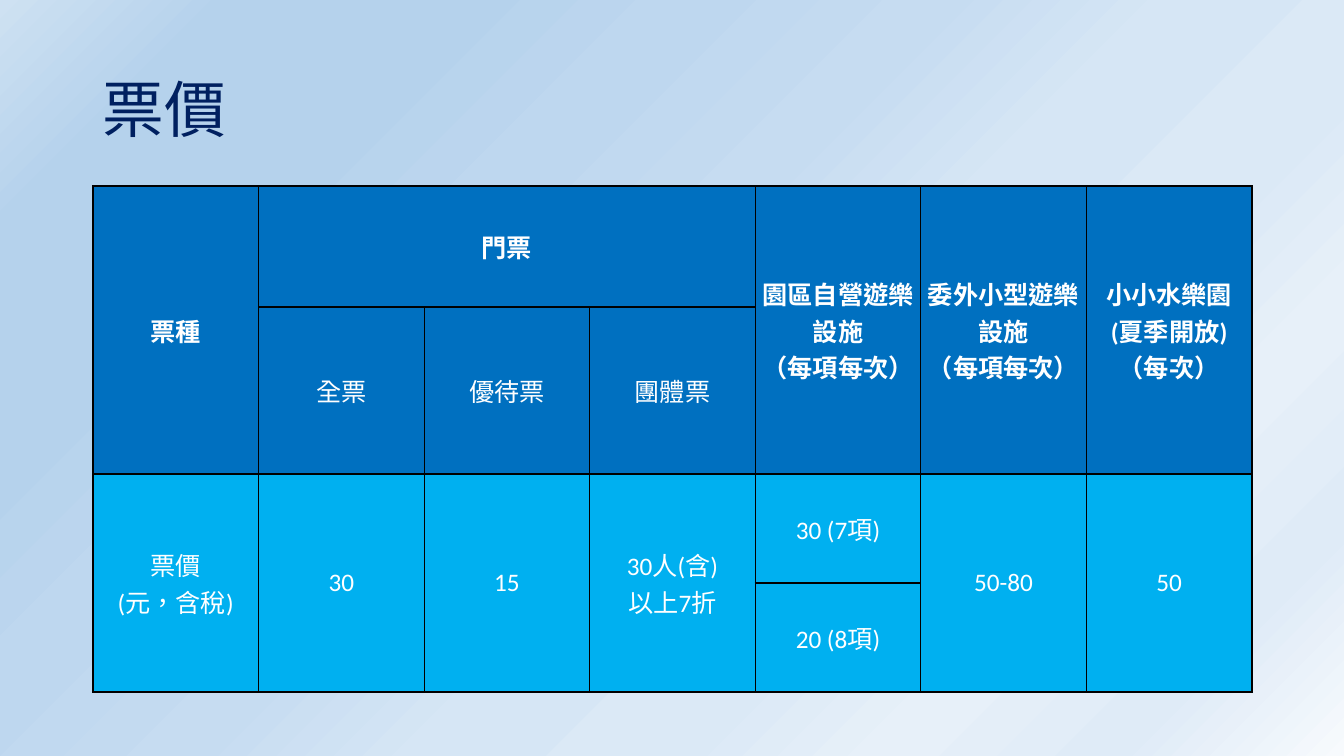
from pptx import Presentation
from pptx.dml.color import RGBColor
from pptx.enum.lang import MSO_LANGUAGE_ID
from pptx.enum.text import MSO_ANCHOR, PP_ALIGN
from pptx.oxml import parse_xml
from pptx.oxml.ns import nsdecls
from pptx.util import Pt

MIDDLE = MSO_ANCHOR.MIDDLE
CENTER, LEFT = PP_ALIGN.CENTER, PP_ALIGN.LEFT
TAIWAN = MSO_LANGUAGE_ID.TRADITIONAL_CHINESE
PX = 914400 / 100.8
CJK = "Noto Sans CJK SC"
HEADER, BODY = "0070C0", "00B0F0"


def color(value):
    return RGBColor.from_string(value)


def write(frame, text, size=18, font="Calibri", ink="FFFFFF", bold=False,
          align=CENTER, spacing=None):
    paragraph = frame.paragraphs[0]
    paragraph.text = text
    paragraph.alignment = align
    paragraph.line_spacing = spacing
    for run in paragraph.runs:
        run.font.size = Pt(size)
        run.font.name = font
        run.font.bold = bold
        run.font.color.rgb = color(ink)
        run.font.language_id = TAIWAN
        run.font.fill
        run.font._element.find("{*}latin").addnext(
            parse_xml(f'<a:ea {nsdecls("a")} typeface="{CJK}"/>'))


prs = Presentation()
prs.slide_width, prs.slide_height = round(1344 * PX), round(756 * PX)
slide = prs.slides.add_slide(prs.slide_layouts[6])

sky = [(0, "F7FAFD"), (11, "DFEBF7"), (22, "E7F0F9"), (32, "DBE9F6"), (44, "D6E6F5"),
       (55, "C6DCF1"), (67, "BED7EF"), (78, "B5D2EC"), (89, "B5D2EC"), (100, "CEE1F2")]
stops = "".join(f'<a:gs pos="{at * 1000}"><a:srgbClr val="{tint}"/></a:gs>' for at, tint in sky)
slide.element.cSld.insert(0, parse_xml(
    f'<p:bg {nsdecls("p", "a")}><p:bgPr><a:gradFill rotWithShape="1"><a:gsLst>{stops}</a:gsLst>'
    '<a:path path="circle"><a:fillToRect l="100000" t="100000"/></a:path>'
    '<a:tileRect r="-100000" b="-100000"/></a:gradFill><a:effectLst/></p:bgPr></p:bg>'))

left, width = 93, 1159
title = slide.shapes.add_textbox(*(round(v * PX) for v in (left, 40, width, 146))).text_frame
title.word_wrap = True
title.vertical_anchor = MIDDLE
write(title, "票價", size=44, font=CJK, ink="002060", align=LEFT, spacing=0.9)

row_heights = [121, 167, 109, 109]
prices = slide.shapes.add_table(
    4, 7, *(round(v * PX) for v in (left, 186, width, sum(row_heights)))).table
for column in prices.columns:
    column.width = round(width * PX / 7)
for row, height in zip(prices.rows, row_heights):
    row.height = round(height * PX)

for r in range(4):
    for c in range(7):
        cell = prices.cell(r, c)
        cell.margin_left = cell.margin_right = cell.margin_top = cell.margin_bottom = round(3 * PX)
        cell.vertical_anchor = MIDDLE
        cell.fill.solid()
        cell.fill.fore_color.rgb = color(HEADER if r < 2 else BODY)
        for i, side in enumerate(("lnL", "lnR", "lnT", "lnB")):
            cell._tc.tcPr.insert(i, parse_xml(
                f'<a:{side} {nsdecls("a")} w="12700"><a:solidFill>'
                f'<a:srgbClr val="000000"/></a:solidFill></a:{side}>'))

entries = [
    (0, 0, 2, 1, "票種"), (0, 1, 1, 3, "門票"),
    (0, 4, 2, 1, "園區自營遊樂設施\v（每項每次）"),
    (0, 5, 2, 1, "委外小型遊樂設施\v（每項每次）"),
    (0, 6, 2, 1, "小小水樂園\v(夏季開放)\v（每次）"),
    (1, 1, 1, 1, "全票"), (1, 2, 1, 1, "優待票"), (1, 3, 1, 1, "團體票"),
    (2, 0, 2, 1, "票價\v(元，含稅)"), (2, 1, 2, 1, "30"), (2, 2, 2, 1, "15"),
    (2, 3, 2, 1, "30人(含)\v以上7折"), (2, 4, 1, 1, "30 (7項)"),
    (2, 5, 2, 1, "50-80"), (2, 6, 2, 1, "50"), (3, 4, 1, 1, "20 (8項)"),
]
for r, c, down, across, text in entries:
    cell = prices.cell(r, c)
    if down * across > 1:
        cell.merge(prices.cell(r + down - 1, c + across - 1))
    write(cell.text_frame, text, bold=r == 0)

prs.save("out.pptx")
